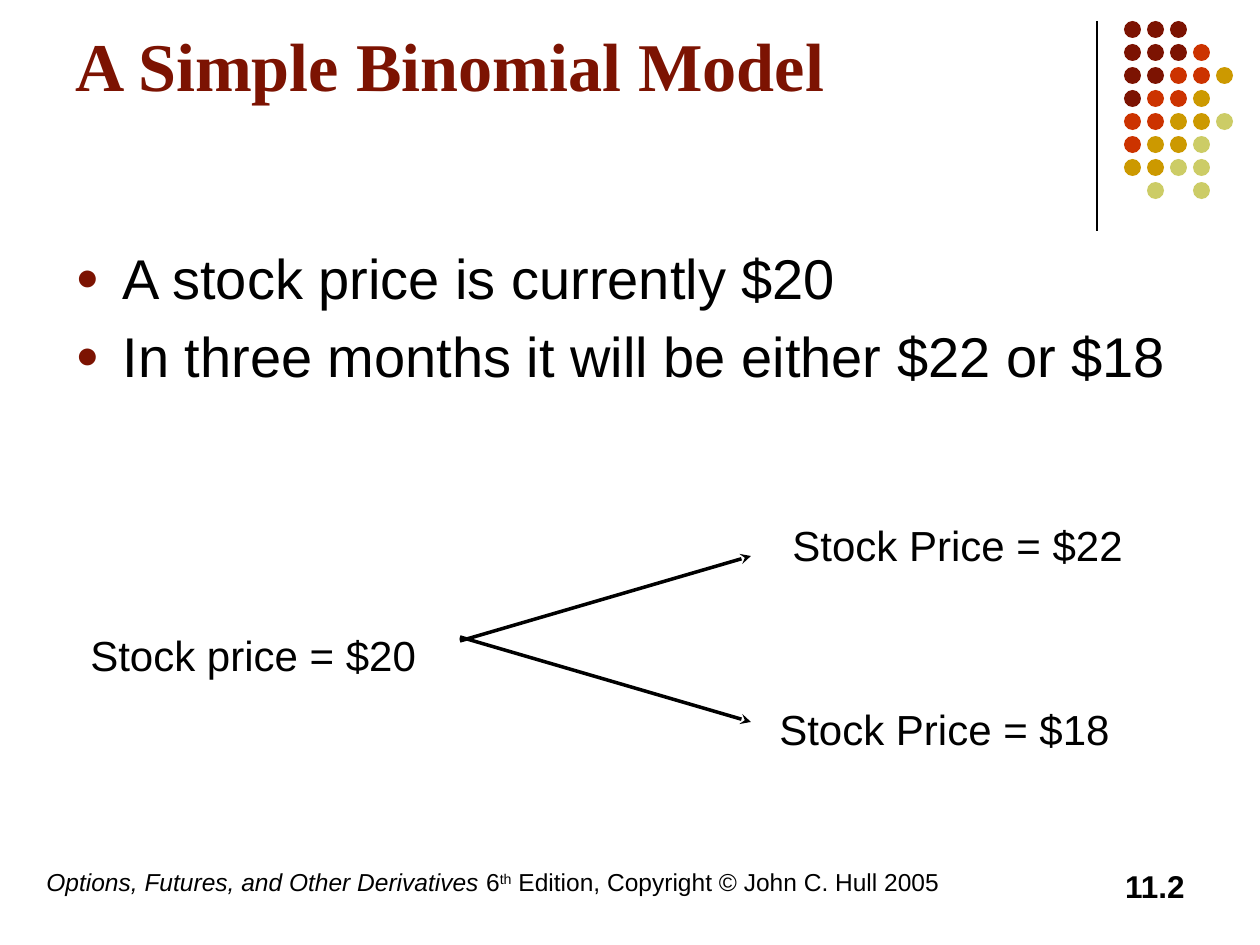
import pptx
import pptx.dml.color
import pptx.enum.shapes
import pptx.enum.text
import pptx.oxml
import pptx.oxml.ns
import pptx.util
from lxml import etree

PX = 914400 // 126  # EMU in one px
qn = pptx.oxml.ns.qn


def tint(hue):
    return pptx.dml.color.RGBColor.from_string(hue)


def write(para, text, size, face="Arial", hue="000000", bold=False, slant=False):
    run = para.add_run()
    run.text = text
    font = run.font
    font.size = pptx.util.Pt(size)
    font.name = face
    font.bold = bold
    font.italic = slant
    font.color.rgb = tint(hue)
    return run


deck = pptx.Presentation()
deck.slide_width = 1260 * PX
deck.slide_height = 945 * PX
slide = deck.slides.add_slide(deck.slide_layouts[1])
shapes = slide.shapes

# Title and list placeholders
title, body = shapes.title, slide.placeholders[1]
for holder, box in ((title, (63, 16, 1040, 179)), (body, (63, 237, 1134, 607))):
    holder.left, holder.top, holder.width, holder.height = [n * PX for n in box]
    holder.text_frame.auto_size = pptx.enum.text.MSO_AUTO_SIZE.NONE

# Title, with an empty second line
title.text_frame.vertical_anchor = pptx.enum.text.MSO_ANCHOR.MIDDLE
para = title.text_frame.paragraphs[0]
para.alignment = pptx.enum.text.PP_ALIGN.LEFT
write(para, "A Simple Binomial Model", 39, "Times New Roman", "7C1302", bold=True)
para.add_line_break()
end = etree.SubElement(para._p, qn("a:endParaRPr"), sz="3900", b="1")
etree.SubElement(end, qn("a:latin"), typeface="Times New Roman")

# Bulleted list
points = ["A stock price is currently $20",
          "In three months it will be either $22 or $18"]
for i, point in enumerate(points):
    para = body.text_frame.paragraphs[0] if i == 0 else body.text_frame.add_paragraph()
    props = para._p.get_or_add_pPr()
    props.set("marL", str(47 * PX))
    props.set("indent", str(-47 * PX))
    color = etree.SubElement(props, qn("a:buClr"))
    etree.SubElement(color, qn("a:srgbClr"), val="7C1302")
    etree.SubElement(props, qn("a:buSzPct"), val="70000")
    etree.SubElement(props, qn("a:buFont"), typeface="Arial")
    etree.SubElement(props, qn("a:buChar"), char="●")
    write(para, point, 32)

# Corner dots: one letter per colour, one string per row
hues = {"m": "7C1302", "r": "CC3300", "g": "CC9900", "l": "CCCC66"}
rows = ["mmm", "mmmr", "mmrrg", "mrrg", "rrggl", "rggl", "ggll", " l l"]
for r, row in enumerate(rows):
    for c, key in enumerate(row):
        if key == " ":
            continue
        dot = shapes.add_shape(pptx.enum.shapes.MSO_SHAPE.OVAL, (1124 + 23 * c) * PX,
                               (21 + 23 * r) * PX, 17 * PX, 17 * PX)
        dot.shadow.inherit = False
        dot.fill.solid()
        dot.fill.fore_color.rgb = tint(hues[key])
        dot.line.fill.background()

# Corner rule and the two price arrows
lines = [(1097, 21, 1097, 231, 0.75, False),
         (460, 641, 751, 556, 2, True),
         (460, 637, 751, 722, 2, True)]
for x1, y1, x2, y2, width, arrow in lines:
    line = shapes.add_connector(pptx.enum.shapes.MSO_CONNECTOR.STRAIGHT,
                                x1 * PX, y1 * PX, x2 * PX, y2 * PX)
    line.line.width = pptx.util.Pt(width)
    line.line.color.rgb = tint("000000")
    if arrow:
        etree.SubElement(line.line._get_or_add_ln(), qn("a:tailEnd"), type="stealth")
    etree.SubElement(line._element.spPr, qn("a:effectLst"))

# Price labels and footer: box, then runs of text, size, bold, italic
notes = [
    ((780, 513, 398, 113), [("Stock Price = $22", 24, False, False)]),
    ((767, 697, 456, 63), [("Stock Price = $18", 24, False, False)]),
    ((78, 623, 393, 63), [("Stock price = $20", 24, False, False)]),
    ((34, 861, 1042, 63), [("Options, Futures, and Other Derivatives", 14, False, True),
                           (" 6", 14, False, False),
                           ("th", 14, False, False),
                           (" Edition, Copyright © John C. Hull 2005", 14, False, False)]),
    ((903, 861, 294, 63), [("11.2", 18, True, False)]),
]
for box, runs in notes:
    frame = shapes.add_textbox(*[n * PX for n in box]).text_frame
    frame.word_wrap = True
    para = frame.paragraphs[0]
    for text, size, bold, slant in runs:
        run = write(para, text, size, bold=bold, slant=slant)
        if text == "th":
            run._r.get_or_add_rPr().set("baseline", "30000")
        if text == "11.2":
            para.alignment = pptx.enum.text.PP_ALIGN.RIGHT

deck.save("out.pptx")
